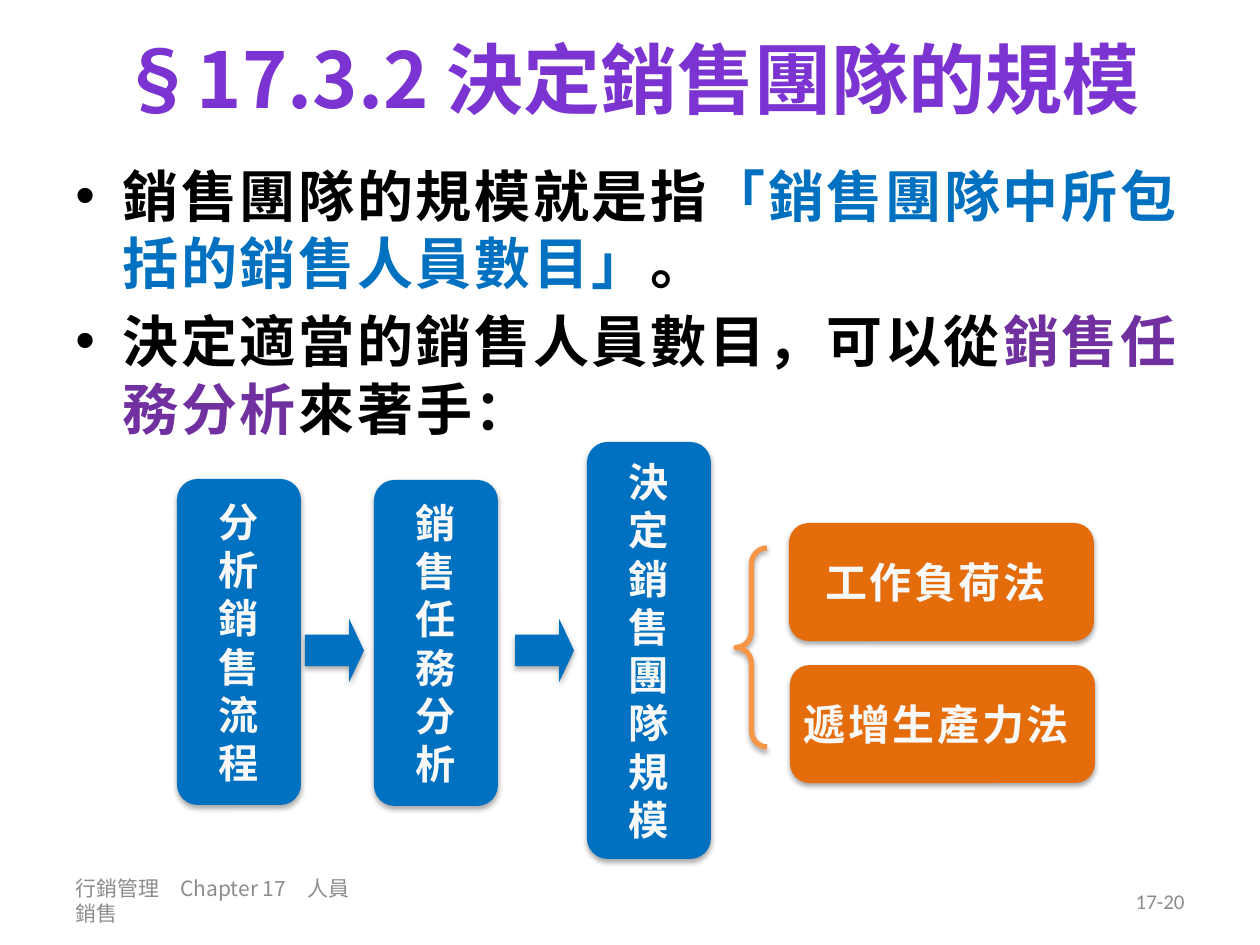
import pptx
import pptx.util
import pptx.dml.color
import pptx.enum.shapes
import pptx.enum.text
import pptx.oxml
from lxml import etree

KIND = pptx.enum.shapes.MSO_SHAPE
ALIGN = pptx.enum.text.PP_ALIGN
ANCHOR = pptx.enum.text.MSO_ANCHOR
NS = 'xmlns:a="http://schemas.openxmlformats.org/drawingml/2006/main"'
SCALE = 914400 / 126
NOTO, LATIN = "Noto Sans CJK SC", "Calibri"
BLUE, ORANGE, WHITE, GREY = "0070C0", "E46C0A", "F8F8F8", "8C8C8C"
PURPLE, VIOLET, BLACK = "7B34D2", "7030A0", "000000"


def px(num):
    return pptx.util.Emu(round(num * SCALE))


def color(code):
    return pptx.dml.color.RGBColor.from_string(code)


def write(para, text, size=32, font=NOTO, ink=BLACK, bold=False, gap=0):
    """Add one run of text to a paragraph."""
    run = para.add_run()
    run.text = text
    run.font.size = pptx.util.Pt(size)
    run.font.bold = bold
    run.font.name = font
    run.font.color.rgb = color(ink)
    props = run.font._element
    if gap:
        props.set("spc", str(gap))
    east = etree.fromstring(f'<a:ea {NS} typeface="{LATIN}"/>')
    props.find("{*}latin").addnext(east)


class Deck:
    def __init__(self):
        self.prs = pptx.Presentation()
        self.prs.slide_width, self.prs.slide_height = px(1260), px(945)
        self.slide = self.prs.slides.add_slide(self.prs.slide_layouts[6])

    def text(self, box, anchor=ANCHOR.MIDDLE, align=ALIGN.LEFT):
        """Add a wrapping text box and return its frame."""
        frame = self.slide.shapes.add_textbox(*map(px, box)).text_frame
        frame.word_wrap = True
        frame.vertical_anchor = anchor
        frame.paragraphs[0].alignment = align
        return frame

    def bullet(self, frame, parts, first=False):
        """Fill one bulleted paragraph with (text, colour) parts."""
        para = frame.paragraphs[0] if first else frame.add_paragraph()
        props = para._p.get_or_add_pPr()
        props.set("marL", "342900")
        props.set("indent", "-342900")
        for tag in (f'<a:buFont {NS} typeface="Arial"/>', f'<a:buChar {NS} char="•"/>'):
            props.append(etree.fromstring(tag))
        if not first:
            para.space_before = pptx.util.Pt(6.4)
        for text, ink in parts:
            write(para, text, font=LATIN, ink=ink, bold=True, gap=150)

    def shape(self, kind, box, fill=None, adjust=()):
        """Add a shape with a soft shadow below it."""
        shape = self.slide.shapes.add_shape(kind, *map(px, box))
        for i, value in enumerate(adjust):
            shape.adjustments[i] = value
        if fill:
            shape.fill.solid()
            shape.fill.fore_color.rgb = color(fill)
            shape.line.fill.background()
        else:
            shape.fill.background()
        shape._element.spPr.append(pptx.oxml.parse_xml(
            f'<a:effectLst {NS}><a:outerShdw blurRad="40000" dist="23000" dir="5400000"'
            ' rotWithShape="0"><a:srgbClr val="000000"><a:alpha val="35000"/></a:srgbClr>'
            '</a:outerShdw></a:effectLst>'))
        return shape

    def label(self, shape, lines, size):
        """Centre white bold lines in a shape."""
        frame = shape.text_frame
        frame.word_wrap = False
        frame.vertical_anchor = ANCHOR.MIDDLE
        for i, line in enumerate(lines):
            para = frame.add_paragraph() if i else frame.paragraphs[0]
            para.alignment = ALIGN.CENTER
            write(para, line, size=size, ink=WHITE, bold=True, gap=150)

    def step(self, text, box):
        """Add a tall step with one character to a line."""
        shape = self.shape(KIND.FLOWCHART_ALTERNATE_PROCESS, box, BLUE)
        self.label(shape, text, 23)

    def method(self, text, box):
        shape = self.shape(KIND.ROUNDED_RECTANGLE, box, ORANGE, (0.167,))
        self.label(shape, [text], 24)


def main():
    deck = Deck()

    # Title
    title = deck.text((63, 0, 1134, 155), align=ALIGN.CENTER).paragraphs[0]
    write(title, "§17.3.2 決定", size=44, ink=PURPLE, bold=True)
    write(title, "銷售團隊的規模", size=44, font=LATIN, ink=PURPLE, bold=True)

    # Bullets
    body = deck.text((63, 155, 1134, 324), anchor=ANCHOR.TOP)
    deck.bullet(body, [("銷售團隊的規模就是指", BLACK),
                       ("「銷售團隊中所包括的銷售人員數目」", BLUE),
                       ("。", BLACK)], first=True)
    deck.bullet(body, [("決定適當的銷售人員數目，可以從", BLACK),
                       ("銷售任務分析", VIOLET), ("來著手：", BLACK)])

    # Footer
    foot = deck.text((63, 876, 309, 50)).paragraphs[0]
    write(foot, "行銷管理　Chapter 17　人員銷售", size=12, ink=GREY)
    page = deck.text((903, 876, 294, 50), align=ALIGN.RIGHT).paragraphs[0]
    write(page, "17-20", size=12, font=LATIN, ink=GREY)

    # Steps and the arrows between them
    deck.step("決定銷售團隊規模", (587, 442, 124, 417))
    deck.step("分析銷售流程", (177, 479, 124, 326))
    deck.step("銷售任務分析", (374, 480, 124, 326))
    for left in (305, 515):
        deck.shape(KIND.RIGHT_ARROW, (left, 619, 59, 63), BLUE, (0.5, 0.25))

    # Methods and their brace
    deck.method("工作負荷法 ", (789, 523, 305, 118))
    deck.method("遞增生產力法 ", (790, 665, 305, 118))
    brace = deck.shape(KIND.LEFT_BRACE, (736, 548, 31, 199), adjust=(0.526, 0.5))
    brace.line.color.rgb = color("F79646")
    brace.line.width = pptx.util.Pt(3)

    deck.prs.save("out.pptx")


if __name__ == "__main__":
    main()
